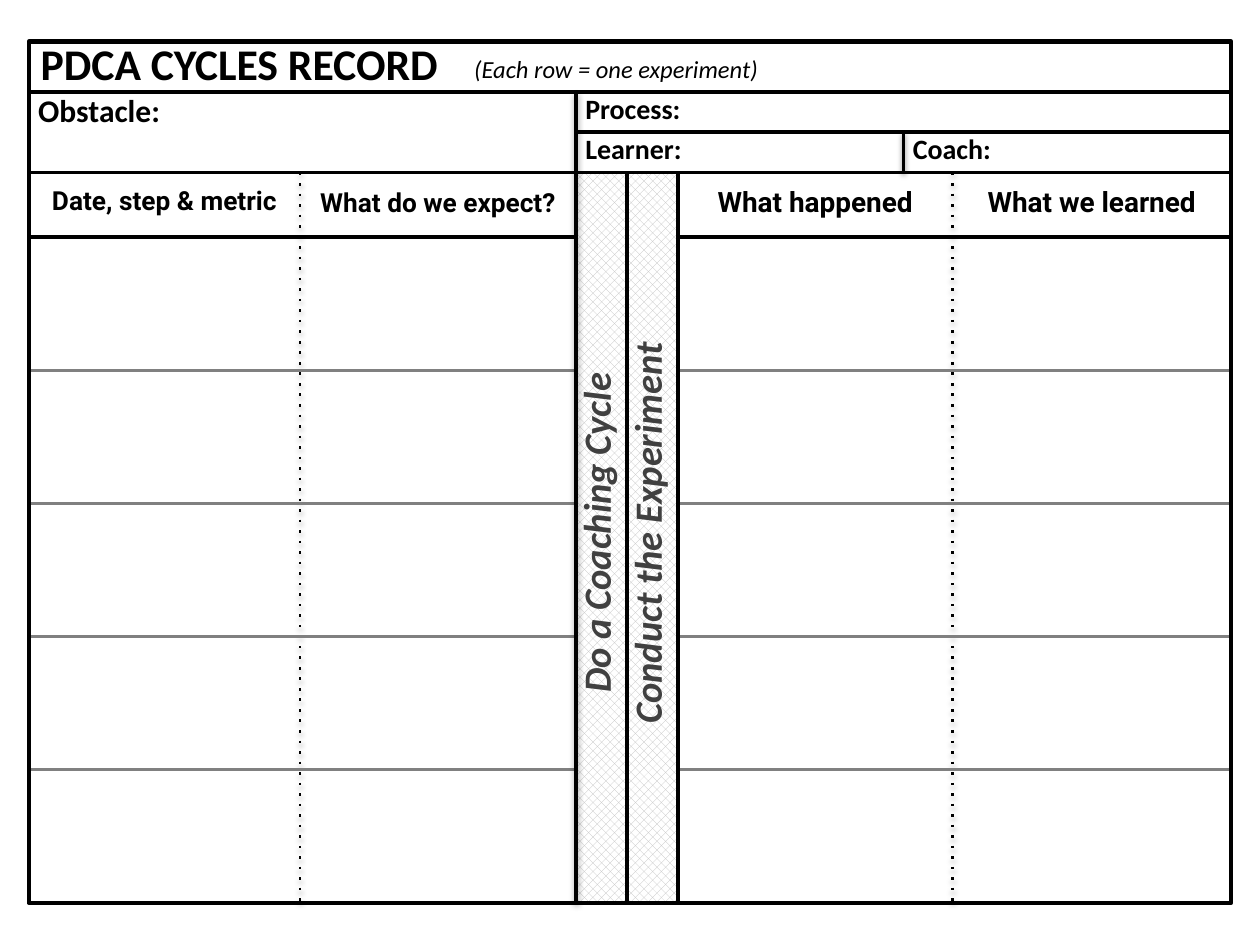
from dataclasses import dataclass

from lxml.etree import SubElement
from pptx import Presentation
from pptx.dml.color import RGBColor
from pptx.enum.dml import MSO_PATTERN_TYPE as Pattern
from pptx.enum.shapes import MSO_CONNECTOR as Connector, MSO_SHAPE as Shape
from pptx.enum.text import MSO_ANCHOR as Anchor, MSO_AUTO_SIZE as AutoSize, PP_ALIGN as Align
from pptx.oxml.ns import qn
from pptx.util import Cm, Pt

BLACK = RGBColor(0x00, 0x00, 0x00)
DARK_GRAY = RGBColor(0x40, 0x40, 0x40)
ROW_GRAY = RGBColor(0x80, 0x80, 0x80)
HATCH_GRAY = RGBColor(0xBF, 0xBF, 0xBF)
WHITE = RGBColor(0xFF, 0xFF, 0xFF)

EXPERIMENT_ROWS = 5
HEADING_HEIGHT = 1.3


@dataclass
class Box:
    """A region of the slide, in centimetres."""
    left: float
    top: float
    width: float
    height: float

    @property
    def right(self):
        return self.left + self.width

    @property
    def bottom(self):
        return self.top + self.height

    def lengths(self):
        return Cm(self.left), Cm(self.top), Cm(self.width), Cm(self.height)


def add_line(slide, start, end, width=2.0, color=BLACK, dotted=False, shadow=False):
    line = slide.shapes.add_connector(
        Connector.STRAIGHT, *(Cm(value) for value in (*start, *end)))
    line.line.color.rgb = color
    line.line.width = Pt(width)
    properties = line.element.spPr
    if dotted:
        SubElement(properties.find(qn("a:ln")), qn("a:prstDash"), val="dot")
    effects = SubElement(properties, qn("a:effectLst"))
    if shadow:
        outer = SubElement(effects, qn("a:outerShdw"), blurRad=str(Pt(3.1)),
                           dist=str(Pt(1.6)), dir="5400000", rotWithShape="0")
        tint = SubElement(outer, qn("a:srgbClr"), val=str(BLACK))
        SubElement(tint, qn("a:alpha"), val="38000")


def add_rectangle(slide, box, width, color=BLACK):
    rectangle = slide.shapes.add_shape(Shape.RECTANGLE, *box.lengths())
    rectangle.shadow.inherit = False
    rectangle.fill.background()
    rectangle.line.color.rgb = color
    rectangle.line.width = Pt(width)
    return rectangle


def write_text(shape, text, size, font="Calibri", color=BLACK, bold=True,
               italic=False, align=Align.LEFT, spacing=None):
    frame = shape.text_frame
    frame.text = text
    frame.word_wrap = True
    frame.auto_size = AutoSize.SHAPE_TO_FIT_TEXT
    frame.vertical_anchor = Anchor.TOP
    frame.margin_left = frame.margin_right = Cm(0.24)
    frame.margin_top = frame.margin_bottom = Cm(0.11)
    paragraph = frame.paragraphs[0]
    paragraph.alignment = align
    if spacing:
        paragraph.line_spacing = spacing
    style = paragraph.runs[0].font
    style.name, style.size, style.bold, style.italic = font, Pt(size), bold, italic
    style.color.rgb = color


def add_label(slide, box, text, size, **style):
    label = slide.shapes.add_textbox(*box.lengths())
    write_text(label, text, size, **style)
    return label


def add_title_bar(slide, box):
    title = slide.shapes.title
    title.left, title.top, title.width, title.height = Box(
        box.left, box.top - 0.2, 12.12, 1.3).lengths()
    write_text(title, "PDCA CYCLES RECORD", 25)
    add_label(slide, Box(box.left + 8.74, box.top + 0.13, 7.26, 0.84),
              "(Each row = one experiment)", 14, bold=False, italic=True)
    add_line(slide, (box.left, box.bottom), (box.right, box.bottom), 2.5)


def add_details(slide, box, split):
    """Obstacle left of the split; process, learner and coach right of it."""
    middle = box.top + box.height / 2
    coach_left = (split + box.right) / 2
    add_label(slide, Box(box.left - 0.05, box.top - 0.12, 4.57, 0.99), "Obstacle:", 18)
    for text, left, top in (("Process:", split, box.top),
                            ("Learner:", split, middle),
                            ("Coach:", coach_left, middle)):
        add_label(slide, Box(left - 0.05, top - 0.12, 4.57, 0.91), text, 16)
    add_line(slide, (split, middle), (box.right, middle))
    add_line(slide, (coach_left, middle), (coach_left, box.bottom), shadow=True)
    add_line(slide, (box.left, box.bottom), (box.right, box.bottom))


def add_record_grid(slide, box, dividers):
    first_row = box.top + HEADING_HEIGHT
    pitch = (box.height - HEADING_HEIGHT) / EXPERIMENT_ROWS
    add_line(slide, (box.left, first_row), (box.right, first_row))
    for divider in dividers:
        add_line(slide, (divider, box.top), (divider, box.bottom), 1.5,
                 dotted=True, shadow=True)
    for row in range(1, EXPERIMENT_ROWS):
        y = first_row + row * pitch
        add_line(slide, (box.left, y), (box.right, y), 1.5, ROW_GRAY)


def add_headings(slide, box, divider, headings):
    """Two centred column headings, each as (text, size, line spacing, drop)."""
    edges = (box.left, divider, box.right)
    for left, right, (text, size, spacing, drop) in zip(edges, edges[1:], headings):
        add_label(slide, Box(left, box.top + drop, right - left, 0.84), text, size,
                  font="Roboto", align=Align.CENTER, spacing=spacing)


def add_band(slide, box, text, line_color):
    band = add_rectangle(slide, box, 2, line_color)
    band.fill.patterned()
    band.fill.pattern = Pattern.PERCENT_50
    band.fill.fore_color.rgb = HATCH_GRAY
    band.fill.back_color.rgb = WHITE
    length, depth = 9.7, 1.19
    center_x = box.left + box.width / 2 - 0.1
    center_y = box.top + box.height / 2 - 0.1
    label = add_label(slide, Box(center_x - length / 2, center_y - depth / 2, length, depth),
                      text, 22, color=DARK_GRAY, italic=True, align=Align.CENTER)
    label.rotation = 270


def build_record(slide, box):
    title_bar = Box(box.left, box.top, box.width, 1.01)
    details = Box(box.left, title_bar.bottom, box.width, 1.63)
    grid = Box(box.left, details.bottom, box.width, box.bottom - details.bottom)
    split, band_width = box.left + 11.03, 1.03
    after_bands = split + 2 * band_width
    left_divider, right_divider = box.left + 5.47, after_bands + 5.53

    add_record_grid(slide, grid, (left_divider, right_divider))
    add_headings(slide, Box(grid.left, grid.top, split - grid.left, HEADING_HEIGHT),
                 left_divider, (("Date, step & metric", 15, 0.9, 0.2),
                                ("What do we expect?", 15, 0.8, 0.28)))
    add_headings(slide, Box(after_bands, grid.top, grid.right - after_bands, HEADING_HEIGHT),
                 right_divider, (("What happened", 16, 0.9, 0.2),
                                 ("What we learned", 16, 0.9, 0.2)))
    bands = (("Do a Coaching Cycle", DARK_GRAY), ("Conduct the Experiment", BLACK))
    for index, (text, line_color) in enumerate(bands):
        add_band(slide, Box(split + index * band_width, grid.top, band_width, grid.height),
                 text, line_color)
    add_line(slide, (split, details.top), (split, box.bottom), shadow=True)
    add_title_bar(slide, title_bar)
    add_details(slide, details, split)
    add_rectangle(slide, box, 2.5)


def main():
    presentation = Presentation()
    presentation.slide_width, presentation.slide_height = Cm(25.4), Cm(19.05)
    slide = presentation.slides.add_slide(presentation.slide_layouts[5])
    build_record(slide, Box(0.58, 0.84, 24.24, 17.36))
    presentation.save("out.pptx")


if __name__ == "__main__":
    main()
